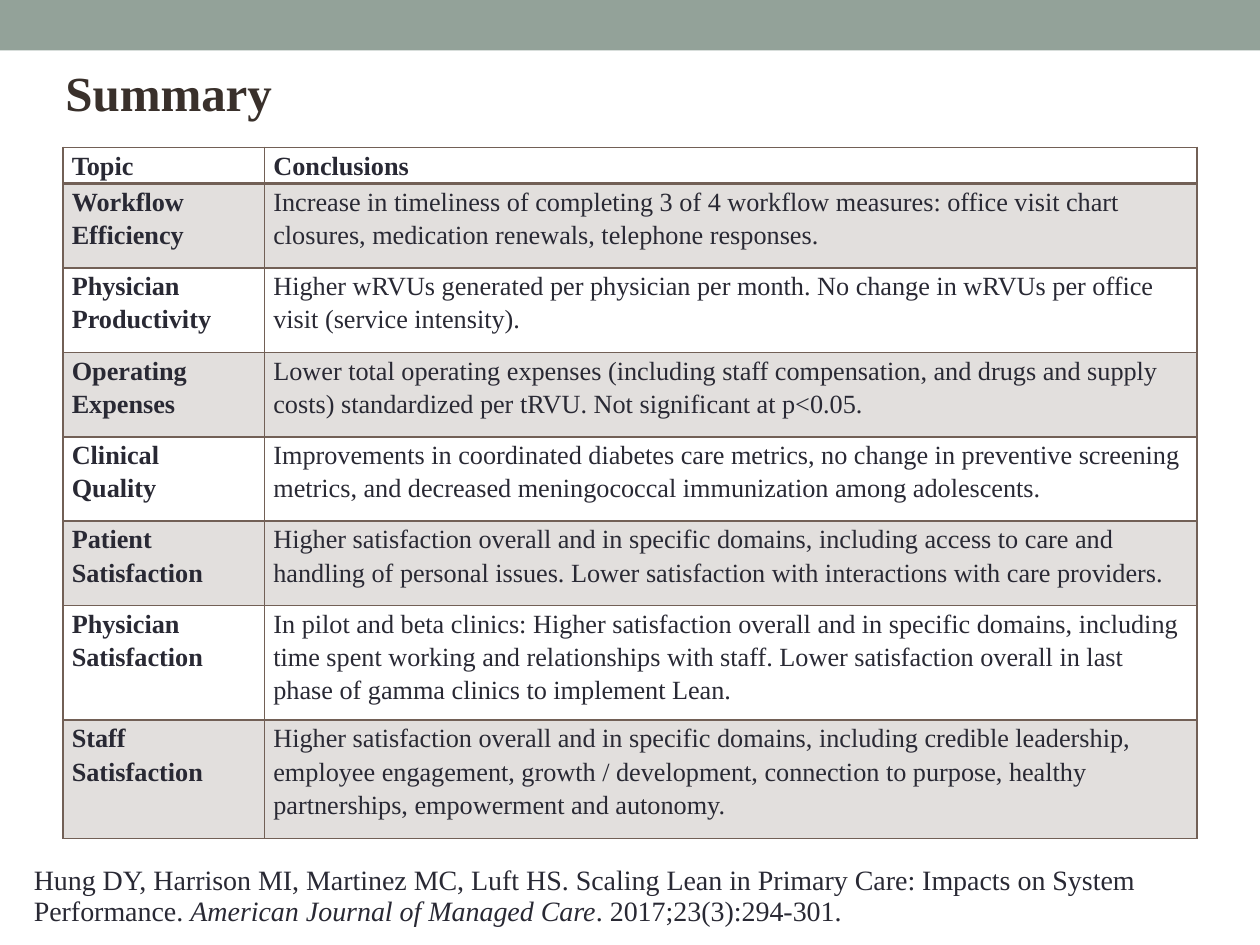
from copy import deepcopy
from typing import NamedTuple

from lxml import etree
from pptx import Presentation
from pptx.dml.color import RGBColor
from pptx.enum.shapes import MSO_SHAPE
from pptx.enum.text import MSO_ANCHOR
from pptx.oxml.ns import qn
from pptx.util import Inches, Pt

RECT = MSO_SHAPE.RECTANGLE
TOP = MSO_ANCHOR.TOP
FONT = "Times New Roman"
SAGE, BROWN, TITLE, INK = "93A299", "726056", "39302B", "292934"

WIDTH, HEIGHT = Inches(10), Inches(7.5)
COL, ROW = WIDTH // 100, HEIGHT // 75  # slide grid of 100 columns by 75 rows


class Box(NamedTuple):
    """Left, top, width and height in grid columns and rows."""
    left: float
    top: float
    width: float
    height: float

    def lengths(self) -> tuple[int, ...]:
        return tuple(int(n * unit) for n, unit in zip(self, (COL, ROW, COL, ROW)))


class Finding(NamedTuple):
    topic: str
    conclusion: str
    height: float = 6.7


class Span(NamedTuple):
    text: str
    italic: bool = False


TABLE_BOX = Box(5, 11.7, 90, 54.6)
TOPIC_COLS, CONCLUSION_COLS = 16, 74
FINDINGS = [
    Finding("Topic", "Conclusions", 2.6),
    Finding("Workflow Efficiency",
            "Increase in timeliness of completing 3 of 4 workflow measures: office "
            "visit chart closures, medication renewals, telephone responses."),
    Finding("Physician\nProductivity",
            "Higher wRVUs generated per physician per month. No change in wRVUs per "
            "office visit (service intensity)."),
    Finding("Operating\nExpenses",
            "Lower total operating expenses (including staff compensation, and drugs "
            "and supply costs) standardized per tRVU. Not significant at p<0.05."),
    Finding("Clinical\nQuality",
            "Improvements in coordinated diabetes care metrics, no change in preventive "
            "screening metrics, and decreased meningococcal immunization among "
            "adolescents."),
    Finding("Patient\nSatisfaction",
            "Higher satisfaction overall and in specific domains, including access to "
            "care and handling of personal issues. Lower satisfaction with interactions "
            "with care providers."),
    Finding("Physician Satisfaction",
            "In pilot and beta clinics: Higher satisfaction overall and in specific "
            "domains, including time spent working and relationships with staff. Lower "
            "satisfaction overall in last phase of gamma clinics to implement Lean.", 9.1),
    Finding("Staff Satisfaction",
            "Higher satisfaction overall and in specific domains, including credible "
            "leadership, employee engagement, growth / development, connection to "
            "purpose, healthy partnerships, empowerment and autonomy.", 9.4),
]
CITATION = [
    Span("Hung DY, Harrison MI, Martinez MC, Luft HS. Scaling Lean in Primary Care: "
         "Impacts on System Performance. "),
    Span("American Journal of Managed Care", True),
    Span(". 2017;23(3):294-301."),
]


def rgb(color: str) -> RGBColor:
    return RGBColor.from_string(color)


def style_run(r, color: str, **formats) -> None:
    for name, value in {"name": FONT, **formats}.items():
        setattr(r.font, name, value)
    r.font.color.rgb = rgb(color)


def add_text(s, box: Box, spans: list[Span], color: str, **formats) -> None:
    tf = s.shapes.add_textbox(*box.lengths()).text_frame
    tf.word_wrap = True
    tf.vertical_anchor = TOP
    p = tf.paragraphs[0]
    p.line_spacing = 0.9
    for span in spans:
        r = p.add_run()
        r.text = span.text
        style_run(r, color, italic=span.italic, **formats)


def set_borders(cell, bottom: float) -> None:
    tc_pr = cell._tc.get_or_add_tcPr()
    for i, (side, width) in enumerate(dict(lnL=1, lnR=1, lnT=1, lnB=bottom).items()):
        line = etree.Element(qn(f"a:{side}"), w=str(Pt(width)))
        fill = etree.SubElement(line, qn("a:solidFill"))
        etree.SubElement(fill, qn("a:srgbClr"), val=BROWN)
        tc_pr.insert(i, line)


def shade(cell) -> None:
    """Fill the cell with brown at 20% opacity."""
    cell.fill.solid()
    cell.fill.fore_color.rgb = rgb(BROWN)
    color = cell._tc.tcPr.find(f"{qn('a:solidFill')}/{qn('a:srgbClr')}")
    etree.SubElement(color, qn("a:alpha"), val="20000")


def fill_cell(cell, text: str, bold: bool, banded: bool, bottom: float) -> None:
    margins = dict(margin_left=0.07, margin_right=0.07, margin_top=0, margin_bottom=0)
    for name, value in margins.items():
        setattr(cell, name, Inches(value))
    cell.vertical_anchor = TOP
    p = cell.text_frame.paragraphs[0]
    p.text = text.replace("\n", "\v")
    p.line_spacing = 1.15
    for r in p.runs:
        style_run(r, INK, size=Pt(15), bold=bold)
    for line_break in p._p.findall(qn("a:br")):
        line_break.append(deepcopy(p.runs[0]._r.rPr))
    if banded:
        shade(cell)
    else:
        cell.fill.background()
    set_borders(cell, bottom)


def add_findings(s) -> None:
    table = s.shapes.add_table(len(FINDINGS), 2, *TABLE_BOX.lengths()).table
    table.horz_banding = False
    for column, cols in zip(table.columns, (TOPIC_COLS, CONCLUSION_COLS)):
        column.width = cols * COL
    for i, finding in enumerate(FINDINGS):
        table.rows[i].height = int(finding.height * ROW)
        header = i == 0
        for j, text in enumerate((finding.topic, finding.conclusion)):
            fill_cell(table.cell(i, j), text, bold=header or j == 0,
                      banded=i % 2 == 1, bottom=2 if header else 1)


def add_band(s) -> None:
    band = s.shapes.add_shape(RECT, *Box(0, 0, 100, 4).lengths())
    band.shadow.inherit = False
    band.fill.solid()
    band.fill.fore_color.rgb = rgb(SAGE)
    band.line.fill.background()


def main() -> None:
    prs = Presentation()
    prs.slide_width, prs.slide_height = WIDTH, HEIGHT
    s = prs.slides.add_slide(prs.slide_layouts[6])
    add_band(s)
    add_text(s, Box(4.2, 5, 97.5, 12.5), [Span("Summary")], TITLE, size=Pt(28), bold=True)
    add_findings(s)
    add_text(s, Box(1.7, 68.3, 99.6, 4.1), CITATION, INK, size=Pt(16))
    prs.save("out.pptx")


if __name__ == "__main__":
    main()
